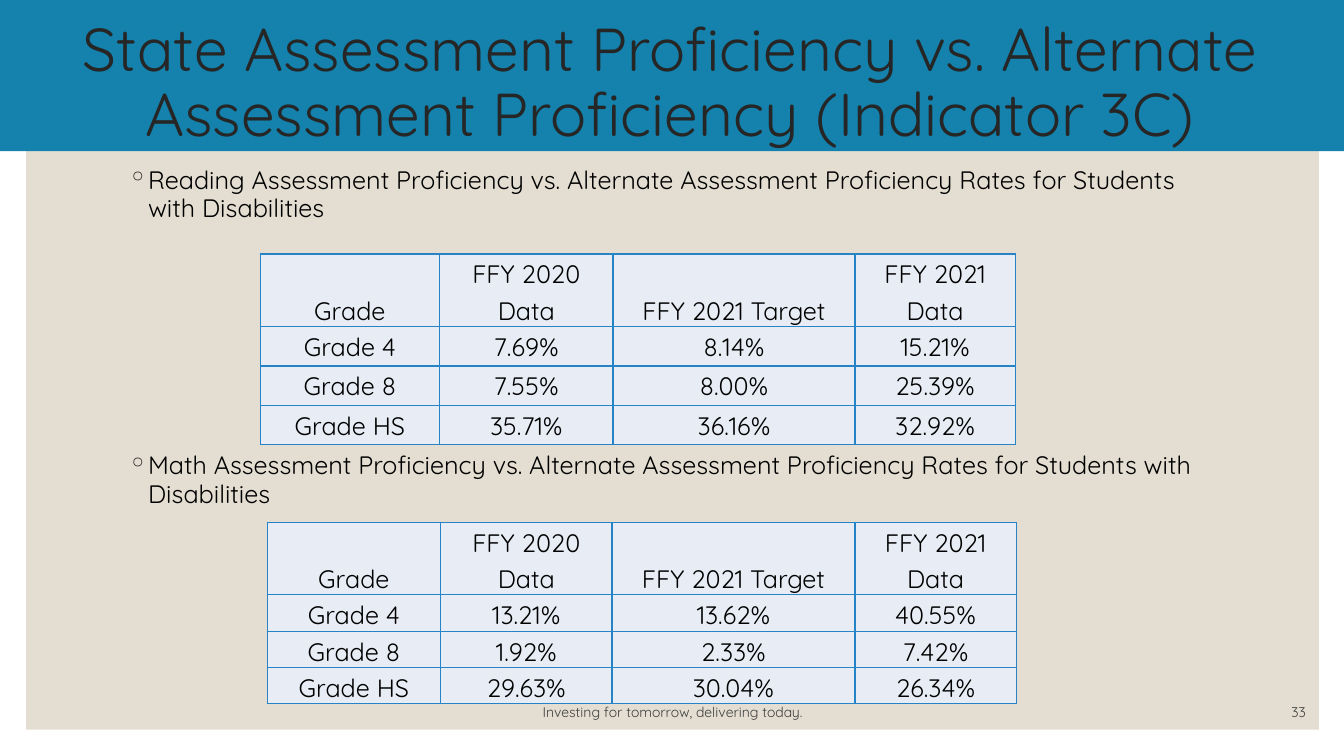
from lxml.etree import SubElement
from pptx import Presentation
from pptx.dml.color import RGBColor
from pptx.enum.shapes import MSO_SHAPE
from pptx.enum.text import MSO_ANCHOR, MSO_AUTO_SIZE, PP_ALIGN
from pptx.oxml.ns import qn
from pptx.util import Inches, Pt

FONT = "Quicksand"
COLORS = {
    "panel": "E3DED1", "banner": "1482AC", "title": "262626", "text": "000000",
    "footer": "404040", "cell": "E8EDF5", "border": "2683C6",
}
HEADINGS = ["Grade", "FFY 2020 Data", "FFY 2021 Target", "FFY 2021 Data"]
READING_ROWS = [
    HEADINGS,
    ["Grade 4", "7.69%", "8.14%", "15.21%"],
    ["Grade 8", "7.55%", "8.00%", "25.39%"],
    ["Grade HS", "35.71%", "36.16%", "32.92%"],
]
MATH_ROWS = [
    HEADINGS,
    ["Grade 4", "13.21%", "13.62%", "40.55%"],
    ["Grade 8", "1.92%", "2.33%", "7.42%"],
    ["Grade HS", "29.63%", "30.04%", "26.34%"],
]
SUBJECTS = ["Reading", "Math"]
RATES = "Assessment Proficiency vs. Alternate Assessment Proficiency Rates for Students with Disabilities"


def color(name):
    """Return the named colour."""
    return RGBColor.from_string(COLORS[name])


def style(para, size, name, align):
    """Set the font and alignment of a paragraph."""
    para.font.name = FONT
    para.font.size = Pt(size)
    para.font.color.rgb = color(name)
    para.alignment = align


def add_band(page, left, top, width, height, name):
    """Add a plain background rectangle."""
    band = page.shapes.add_shape(
        MSO_SHAPE.RECTANGLE, Inches(left), Inches(top), Inches(width), Inches(height))
    band.shadow.inherit = False
    band.fill.solid()
    band.fill.fore_color.rgb = color(name)
    band.line.fill.background()


def place_title(page, text):
    """Fill the title placeholder and bring it in front of the banner."""
    title = page.shapes.title
    title.left, title.top = Inches(0.24), Inches(0.09)
    title.width, title.height = Inches(12.81), Inches(1.5)
    frame = title.text_frame
    frame.text = text
    frame.auto_size = MSO_AUTO_SIZE.NONE
    frame.vertical_anchor = MSO_ANCHOR.MIDDLE
    para = frame.paragraphs[0]
    style(para, 43.2, "title", PP_ALIGN.CENTER)
    para.line_spacing = 0.9
    page.shapes.element.append(title.element)


def add_bullet(para):
    """Give a paragraph a hanging ring bullet."""
    properties = para._p.get_or_add_pPr()
    properties.set("marL", str(Inches(0.2)))
    properties.set("indent", str(-Inches(0.2)))
    bullet_color = SubElement(properties, qn("a:buClr"))
    SubElement(bullet_color, qn("a:srgbClr"), val=COLORS["title"])
    SubElement(properties, qn("a:buChar"), char="◦")


def add_bullets(page):
    """Add the two subject lines, with room for a table between them."""
    box = page.shapes.add_textbox(Inches(1.17), Inches(1.6), Inches(11), Inches(4.99))
    frame = box.text_frame
    frame.word_wrap = True
    for index, subject in enumerate(SUBJECTS):
        para = frame.paragraphs[0] if index == 0 else frame.add_paragraph()
        para.text = f"{subject} {RATES}"
        style(para, 18, "text", PP_ALIGN.LEFT)
        para.line_spacing = 0.95
        para.space_before = Pt(163 * index)
        add_bullet(para)


def add_borders(cell):
    """Draw a thin border on all sides of a cell."""
    properties = cell._tc.get_or_add_tcPr()
    for index, side in enumerate(["lnL", "lnR", "lnT", "lnB"]):
        line = properties.makeelement(qn(f"a:{side}"), {"w": str(Pt(1))})
        fill = SubElement(line, qn("a:solidFill"))
        SubElement(fill, qn("a:srgbClr"), val=COLORS["border"])
        properties.insert(index, line)


def fill_cell(cell, text, anchor):
    """Write and format one table cell."""
    cell.text = text
    cell.vertical_anchor = anchor
    cell.margin_left = cell.margin_right = Inches(0.07)
    cell.margin_top = cell.margin_bottom = 0
    cell.fill.solid()
    cell.fill.fore_color.rgb = color("cell")
    para = cell.text_frame.paragraphs[0]
    style(para, 18, "text", PP_ALIGN.CENTER)
    para.line_spacing = 1.15
    para.space_before = para.space_after = Pt(3)
    add_borders(cell)


def add_rates(page, left, top, widths, row_height, rows, value_anchor):
    """Add a table of proficiency rates by grade."""
    heights = [0.72] + [row_height] * (len(rows) - 1)
    table = page.shapes.add_table(
        len(rows), len(widths), Inches(left), Inches(top),
        Inches(sum(widths)), Inches(sum(heights))).table
    table.first_row = table.horz_banding = False
    for column, width in zip(table.columns, widths):
        column.width = Inches(width)
    for row_index, (row, height) in enumerate(zip(table.rows, heights)):
        row.height = Inches(height)
        for column_index, text in enumerate(rows[row_index]):
            anchor = value_anchor if column_index else MSO_ANCHOR.TOP
            if row_index == 0:
                anchor = MSO_ANCHOR.BOTTOM
            fill_cell(table.cell(row_index, column_index), text, anchor)


def add_footer(page, left, width, text, align):
    """Add a small text at the foot of the page."""
    box = page.shapes.add_textbox(Inches(left), Inches(6.9), Inches(width), Inches(0.3))
    frame = box.text_frame
    frame.word_wrap = True
    frame.vertical_anchor = MSO_ANCHOR.BOTTOM
    frame.text = text
    style(frame.paragraphs[0], 10, "footer", align)


def main():
    """Build the slide and save the deck."""
    deck = Presentation()
    deck.slide_width, deck.slide_height = Inches(13.33), Inches(7.5)
    page = deck.slides.add_slide(deck.slide_layouts[5])
    add_band(page, 0.26, 0.26, 12.82, 6.98, "panel")
    add_band(page, 0, 0, 13.33, 1.5, "banner")
    add_footer(page, 3.82, 5.7, "Investing for tomorrow, delivering today.", PP_ALIGN.CENTER)
    add_footer(page, 11.45, 1.6, "33", PP_ALIGN.RIGHT)
    add_bullets(page)
    place_title(page, "State Assessment Proficiency vs. Alternate Assessment Proficiency (Indicator 3C)")
    add_rates(page, 2.58, 2.52, [1.78, 1.72, 2.4, 1.59], 0.39, READING_ROWS, MSO_ANCHOR.TOP)
    add_rates(page, 2.65, 5.18, [1.72, 1.7, 2.41, 1.6], 0.36, MATH_ROWS, MSO_ANCHOR.MIDDLE)
    deck.save("out.pptx")


if __name__ == "__main__":
    main()
